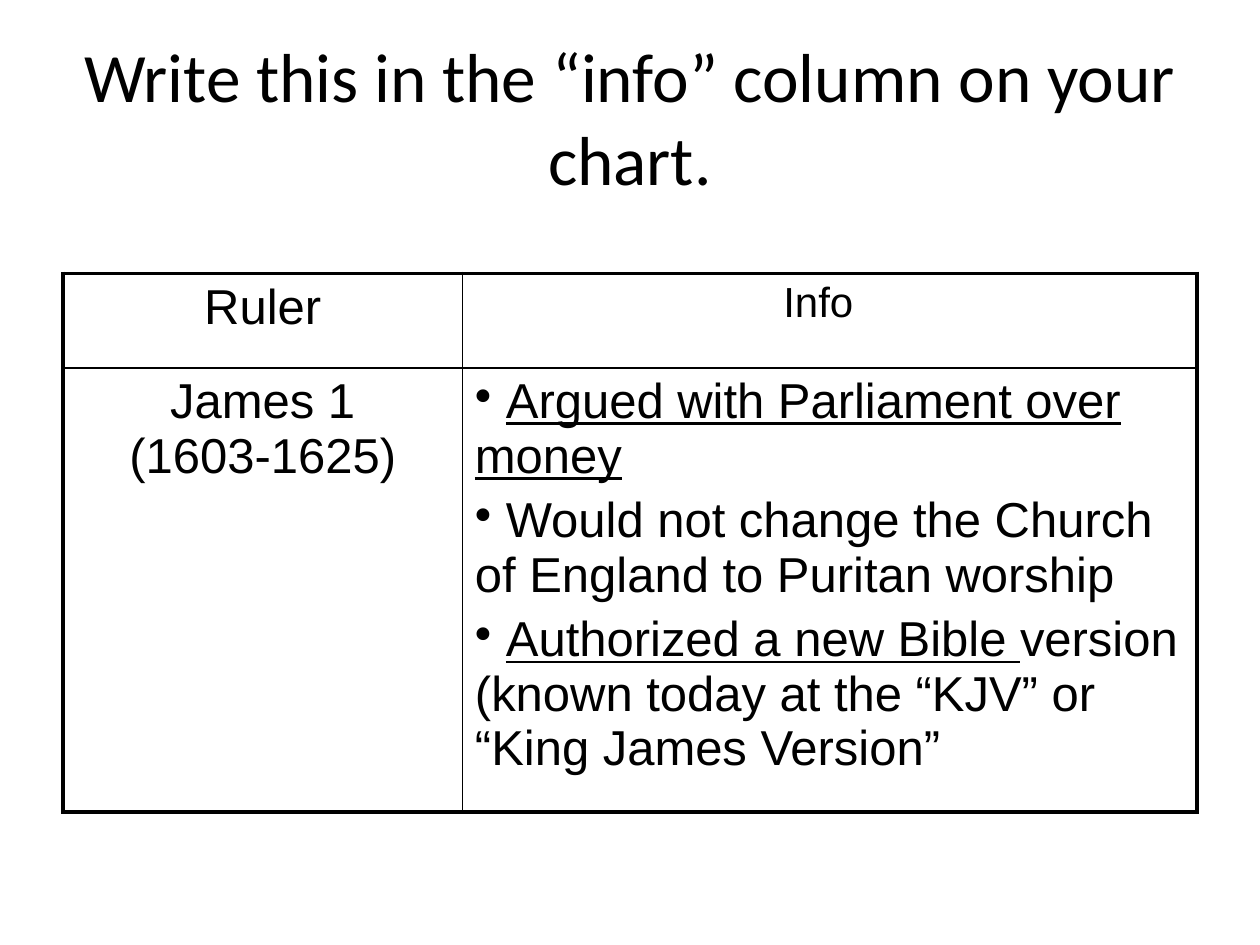
from dataclasses import dataclass

from lxml.etree import SubElement
from pptx import Presentation
from pptx.dml.color import RGBColor
from pptx.enum.text import MSO_ANCHOR, PP_ALIGN
from pptx.oxml import parse_xml
from pptx.oxml.ns import nsdecls, qn
from pptx.util import Inches, Pt


@dataclass(frozen=True)
class Theme:
    ink: str = "000000"
    title_font: str = "Calibri"
    table_font: str = "Arial"
    title_size: float = 39.6
    body_size: float = 28
    info_size: float = 24
    outer_line: float = 2.25
    inner_line: float = 1
    paragraph_gap: float = 0.2  # share of the type size


@dataclass(frozen=True)
class Span:
    text: str
    underline: bool = False


@dataclass(frozen=True)
class Entry:
    paragraphs: tuple[tuple[Span, ...], ...]
    size: float
    bullet: bool = False
    right_margin: float = 0.1


THEME = Theme()
COLUMN_WIDTHS = (3.17, 5.83)
ROW_HEIGHTS = (0.75, 3.29)
ENTRIES = (
    (
        Entry(((Span("Ruler"),),), THEME.body_size),
        Entry(((Span("Info"),),), THEME.info_size, right_margin=0.28),
    ),
    (
        Entry(((Span("James 1\n(1603-1625)"),),), THEME.body_size),
        Entry(
            (
                (Span(" "), Span("Argued with Parliament over money", True)),
                (Span(" Would not change the Church of England to Puritan worship"),),
                (
                    Span(" "),
                    Span("Authorized a new Bible ", True),
                    Span("version (known today at the “KJV” or “King James Version”"),
                ),
            ),
            THEME.body_size,
            bullet=True,
        ),
    ),
)


def add_span(para, span: Span, font_name: str, size: float) -> None:
    """Add the text run by run, with a line break at each newline."""
    for index, line in enumerate(span.text.split("\n")):
        if index:
            para.add_line_break()
        run = para.add_run()
        run.text = line
        run.font.name = font_name
        run.font.size = Pt(size)
        run.font.underline = span.underline
        run.font.color.rgb = RGBColor.from_string(THEME.ink)


def add_bullet(para) -> None:
    properties = para._p.get_or_add_pPr()
    properties.set("marL", "0")
    properties.set("indent", "0")
    SubElement(properties, qn("a:buChar")).set("char", "•")


def set_borders(cell, widths: dict[str, float]) -> None:
    properties = cell._tc.get_or_add_tcPr()
    for index, (side, width) in enumerate(widths.items()):
        line = parse_xml(
            f'<a:ln{side} {nsdecls("a")} w="{int(Pt(width))}"><a:solidFill>'
            f'<a:srgbClr val="{THEME.ink}"/></a:solidFill></a:ln{side}>'
        )
        properties.insert(index, line)


def fill_cell(cell, entry: Entry) -> None:
    cell.fill.background()
    cell.margin_right = Inches(entry.right_margin)
    frame = cell.text_frame
    for index, spans in enumerate(entry.paragraphs):
        para = frame.add_paragraph() if index else frame.paragraphs[0]
        para.alignment = PP_ALIGN.LEFT if entry.bullet else PP_ALIGN.CENTER
        para.space_before = Pt(entry.size * THEME.paragraph_gap)
        if entry.bullet:
            add_bullet(para)
        for span in spans:
            add_span(para, span, THEME.table_font, entry.size)


def add_title(page, text: str) -> None:
    box = page.shapes.add_textbox(Inches(0.5), Inches(0.3), Inches(9), Inches(1.25))
    frame = box.text_frame
    frame.word_wrap = True
    frame.vertical_anchor = MSO_ANCHOR.MIDDLE
    para = frame.paragraphs[0]
    para.alignment = PP_ALIGN.CENTER
    add_span(para, Span(text), THEME.title_font, THEME.title_size)


def add_ruler_table(page) -> None:
    last_row, last_column = len(ROW_HEIGHTS) - 1, len(COLUMN_WIDTHS) - 1
    table = page.shapes.add_table(
        len(ROW_HEIGHTS), len(COLUMN_WIDTHS), Inches(0.5), Inches(2.17),
        Inches(sum(COLUMN_WIDTHS)), Inches(sum(ROW_HEIGHTS)),
    ).table
    table.first_row = table.horz_banding = False
    for column, width in zip(table.columns, COLUMN_WIDTHS):
        column.width = Inches(width)
    for row, height in zip(table.rows, ROW_HEIGHTS):
        row.height = Inches(height)

    # Heavy lines run around the table, fine lines between its cells
    for r, entries in enumerate(ENTRIES):
        for c, entry in enumerate(entries):
            cell = table.cell(r, c)
            fill_cell(cell, entry)
            outer = {"L": c == 0, "R": c == last_column, "T": r == 0, "B": r == last_row}
            set_borders(cell, {
                side: THEME.outer_line if is_outer else THEME.inner_line
                for side, is_outer in outer.items()
            })


def main() -> None:
    deck = Presentation()
    deck.slide_width, deck.slide_height = Inches(10), Inches(7.5)
    page = deck.slides.add_slide(deck.slide_layouts[6])
    add_title(page, "Write this in the “info” column on your chart.")
    add_ruler_table(page)
    deck.save("out.pptx")


if __name__ == "__main__":
    main()
